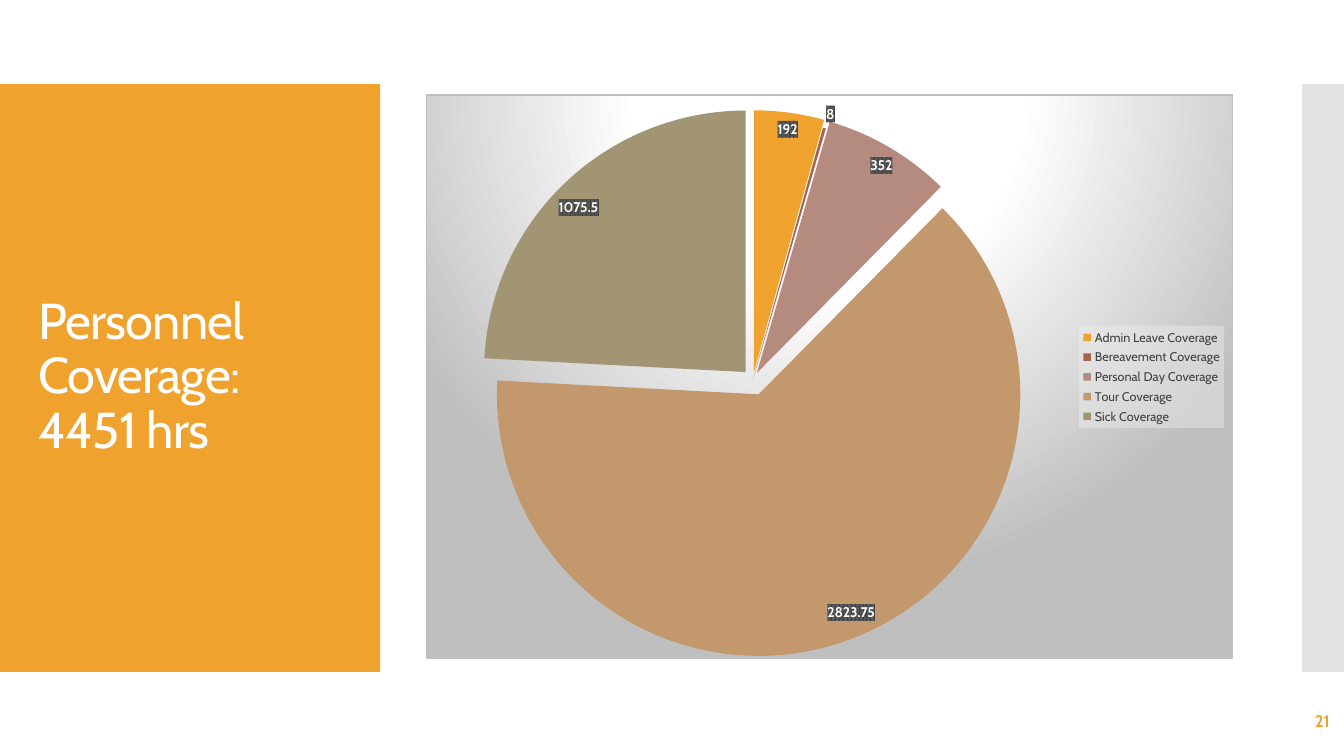
from dataclasses import dataclass

from lxml import etree
from pptx import Presentation
from pptx.chart.data import CategoryChartData
from pptx.dml.color import RGBColor
from pptx.enum.chart import XL_CHART_TYPE, XL_LABEL_POSITION, XL_LEGEND_POSITION
from pptx.enum.shapes import MSO_SHAPE
from pptx.enum.text import MSO_ANCHOR, PP_ALIGN
from pptx.oxml import parse_xml
from pptx.oxml.ns import nsdecls, qn
from pptx.util import Pt

PX = 9525
FONT = "Cabin"
ORANGE = RGBColor(0xF0, 0xA2, 0x2E)
RUST = RGBColor(0xA5, 0x64, 0x4E)
ROSE = RGBColor(0xB5, 0x8B, 0x80)
TAN = RGBColor(0xC3, 0x98, 0x6D)
OLIVE = RGBColor(0xA1, 0x95, 0x74)
WHITE = RGBColor(0xFF, 0xFF, 0xFF)
BLACK = RGBColor(0x00, 0x00, 0x00)
DARK = RGBColor(0x40, 0x40, 0x40)
MID = RGBColor(0x59, 0x59, 0x59)
SILVER = RGBColor(0xBF, 0xBF, 0xBF)
GRAY = RGBColor(0xC8, 0xC8, 0xC8)
PALE = RGBColor(0xF2, 0xF2, 0xF2)

RECT = MSO_SHAPE.RECTANGLE
MIDDLE = MSO_ANCHOR.MIDDLE
LEFT, RIGHT = PP_ALIGN.LEFT, PP_ALIGN.RIGHT
PIE = XL_CHART_TYPE.PIE
BEST_FIT = XL_LABEL_POSITION.BEST_FIT
LEGEND_RIGHT = XL_LEGEND_POSITION.RIGHT


@dataclass(frozen=True)
class Box:
    """A rectangle in px."""
    x: int
    y: int
    w: int
    h: int

    def emu(self) -> tuple[int, int, int, int]:
        """Return left, top, width and height in EMU."""
        return self.x * PX, self.y * PX, self.w * PX, self.h * PX


@dataclass(frozen=True)
class Panel:
    """A plain coloured block."""
    box: Box
    color: RGBColor
    opacity: int = 100


@dataclass(frozen=True)
class Label:
    """A single-paragraph text box."""
    box: Box
    text: str
    size: int
    color: RGBColor
    bold: bool = False
    align: PP_ALIGN = LEFT
    line_spacing: float = 1.0
    tracking: int = 0


@dataclass(frozen=True)
class Slice:
    """A pie slice and its offset in percent of the radius."""
    name: str
    hours: float
    color: RGBColor
    explosion: int


PANELS = [
    Panel(Box(0, 80, 362, 560), ORANGE),
    Panel(Box(1240, 80, 40, 560), GRAY, 50),
]
LABELS = [
    Label(Box(27, 118, 309, 483), "Personnel Coverage: 4451 hrs", 36, WHITE,
          line_spacing=0.9, tracking=-60),
    Label(Box(1116, 667, 160, 38), "21", 12, ORANGE, bold=True, align=RIGHT),
]
CHART_BOX = Box(406, 90, 768, 538)
SLICES = [
    Slice("Admin Leave Coverage", 192, ORANGE, 3),
    Slice("Bereavement Coverage", 8, RUST, 0),
    Slice("Personal Day Coverage", 352, ROSE, 3),
    Slice("Tour Coverage", 2823.75, TAN, 6),
    Slice("Sick Coverage", 1075.5, OLIVE, 4),
]
PLOT_LAYOUT = {"x": 0.08, "y": 0.04, "w": 0.65, "h": 0.93}

CHART_FILL = (
    '<a:gradFill><a:gsLst>'
    f'<a:gs pos="0"><a:srgbClr val="{WHITE}"/></a:gs>'
    f'<a:gs pos="39000"><a:srgbClr val="{WHITE}"/></a:gs>'
    f'<a:gs pos="100000"><a:srgbClr val="{SILVER}"/></a:gs>'
    '</a:gsLst><a:path path="circle">'
    '<a:fillToRect l="50000" t="-80000" r="50000" b="180000"/></a:path></a:gradFill>'
    f'<a:ln w="9525"><a:solidFill><a:srgbClr val="{SILVER}"/></a:solidFill></a:ln>'
)
LEGEND_FILL = (
    f'<a:solidFill><a:srgbClr val="{PALE}"><a:alpha val="39000"/></a:srgbClr></a:solidFill>'
)
LABEL_FILL = (
    f'<a:pattFill prst="pct75"><a:fgClr><a:srgbClr val="{DARK}"/></a:fgClr>'
    f'<a:bgClr><a:srgbClr val="{MID}"/></a:bgClr></a:pattFill>'
)


def set_font(font, size: int, color: RGBColor, bold: bool = False) -> None:
    """Apply the slide typeface with a size, colour and weight."""
    font.name, font.size, font.bold = FONT, Pt(size), bold
    font.color.rgb = color


def add_panel(shapes, panel: Panel) -> None:
    """Draw a borderless block."""
    sp = shapes.add_shape(RECT, *panel.box.emu())
    sp.shadow.inherit = False
    sp.line.fill.background()
    sp.fill.solid()
    sp.fill.fore_color.rgb = panel.color
    if panel.opacity < 100:
        color = sp.fill._xPr.find(qn("a:solidFill"))[0]
        etree.SubElement(color, qn("a:alpha")).set("val", str(panel.opacity * 1000))


def add_label(shapes, label: Label) -> None:
    """Draw a vertically centred text box."""
    tf = shapes.add_textbox(*label.box.emu()).text_frame
    tf.word_wrap = True
    tf.vertical_anchor = MIDDLE
    p = tf.paragraphs[0]
    p.text = label.text
    p.alignment = label.align
    p.line_spacing = label.line_spacing
    r = p.runs[0]
    set_font(r.font, label.size, label.color, label.bold)
    if label.tracking:
        r.font._element.set("spc", str(label.tracking))


def add_fill(parent, fill: str) -> None:
    """Insert shape properties ahead of the text properties of a chart part."""
    xml = f'<c:spPr {nsdecls("c", "a")}>{fill}</c:spPr>'
    parent.find(qn("c:txPr")).addprevious(parse_xml(xml))


def set_plot_layout(plot_area) -> None:
    """Fix the inner plot area to fractions of the chart."""
    for old in plot_area.findall(qn("c:layout")):
        plot_area.remove(old)
    modes = '<c:layoutTarget val="inner"/><c:xMode val="edge"/><c:yMode val="edge"/>'
    sizes = "".join(f'<c:{k} val="{v}"/>' for k, v in PLOT_LAYOUT.items())
    xml = (f'<c:layout {nsdecls("c")}><c:manualLayout>{modes}{sizes}'
           '</c:manualLayout></c:layout>')
    plot_area.insert(0, parse_xml(xml))


def add_pie(shapes, box: Box, slices: list[Slice]) -> None:
    """Draw the exploded pie with its legend and value labels."""
    data = CategoryChartData()
    data.categories = [s.name for s in slices]
    data.add_series("Series 1", [s.hours for s in slices])
    chart = shapes.add_chart(PIE, *box.emu(), data).chart
    chart.has_title = False
    set_font(chart.font, 10, BLACK)
    add_fill(chart.element, CHART_FILL)
    set_plot_layout(chart.element.chart.plotArea)

    chart.has_legend = True
    legend = chart.legend
    legend.position = LEGEND_RIGHT
    legend.include_in_layout = False
    set_font(legend.font, 9, DARK)
    add_fill(legend._element, LEGEND_FILL)

    plot = chart.plots[0]
    plot.vary_by_categories = True
    series = plot.series[0]
    for i, s in enumerate(slices):
        fmt = series.points[i].format
        fmt.fill.solid()
        fmt.fill.fore_color.rgb = s.color
        fmt.line.fill.background()
    for d_pt, s in zip(series._element.findall(qn("c:dPt")), slices):
        explosion = etree.Element(qn("c:explosion"), val=str(s.explosion))
        d_pt.find(qn("c:spPr")).addprevious(explosion)

    labels = series.data_labels
    labels.show_value = True
    labels.position = BEST_FIT
    set_font(labels.font, 10, WHITE, bold=True)
    add_fill(labels._element, LABEL_FILL)


def main() -> None:
    """Build and save the slide."""
    prs = Presentation()
    prs.slide_width, prs.slide_height = 1280 * PX, 720 * PX
    shapes = prs.slides.add_slide(prs.slide_layouts[6]).shapes
    for panel in PANELS:
        add_panel(shapes, panel)
    for label in LABELS:
        add_label(shapes, label)
    add_pie(shapes, CHART_BOX, SLICES)
    prs.save("out.pptx")


if __name__ == "__main__":
    main()
